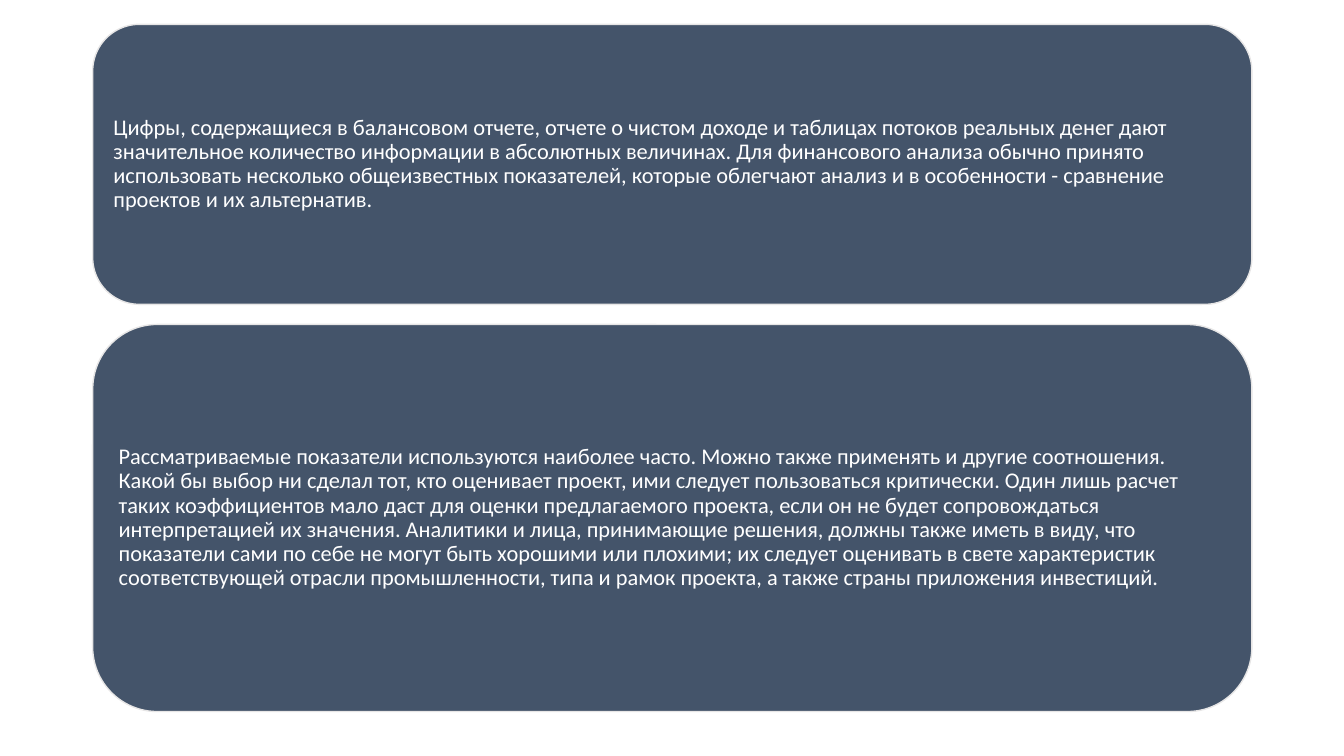
from pptx import Presentation
from pptx.dml.color import RGBColor
from pptx.enum.shapes import MSO_SHAPE as Preset
from pptx.enum.text import MSO_ANCHOR as Anchor, PP_ALIGN as Align
from pptx.util import Pt

COLORS = {"panel": "44546A", "outline": "E7E6E6", "text": "FFFFFF"}
PANEL_LEFT, PANEL_WIDTH = 66.24, 828
FIRST_TOP, PANEL_GAP = 17.4, 14.4
TEXT_INSET = 5.04

STATEMENTS = [
    (200, "Цифры, содержащиеся в балансовом отчете, отчете о чистом доходе и "
          "таблицах потоков реальных денег дают значительное количество информации "
          "в абсолютных величинах. Для финансового анализа обычно принято "
          "использовать несколько общеизвестных показателей, которые облегчают "
          "анализ и в особенности - сравнение проектов и их альтернатив."),
    (276.5, "Рассматриваемые показатели используются наиболее часто. Можно также "
            "применять и другие соотношения. Какой бы выбор ни сделал тот, кто "
            "оценивает проект, ими следует пользоваться критически. Один лишь расчет "
            "таких коэффициентов мало даст для оценки предлагаемого проекта, если он "
            "не будет сопровождаться интерпретацией их значения. Аналитики и лица, "
            "принимающие решения, должны также иметь в виду, что показатели сами по "
            "себе не могут быть хорошими или плохими; их следует оценивать в свете "
            "характеристик соответствующей отрасли промышленности, типа и рамок "
            "проекта, а также страны приложения инвестиций."),
]


def color(role):
    return RGBColor.from_string(COLORS[role])


def add_panel(slide, top, height, statement):
    panel = slide.shapes.add_shape(
        Preset.ROUNDED_RECTANGLE, Pt(PANEL_LEFT), Pt(top), Pt(PANEL_WIDTH), Pt(height))
    panel.shadow.inherit = False
    panel.fill.solid()
    panel.fill.fore_color.rgb = color("panel")
    panel.line.color.rgb = color("outline")
    panel.line.width = Pt(1)
    write_statement(panel.text_frame, statement)


def write_statement(frame, statement):
    frame.word_wrap = True
    frame.vertical_anchor = Anchor.MIDDLE
    frame.margin_left = frame.margin_right = Pt(TEXT_INSET)
    frame.margin_top = frame.margin_bottom = Pt(TEXT_INSET)
    frame.text = statement
    paragraph = frame.paragraphs[0]
    paragraph.alignment = Align.LEFT
    paragraph.line_spacing = 0.9
    font = paragraph.runs[0].font
    font.name = "Calibri"
    font.size = Pt(16)
    font.color.rgb = color("text")


def main():
    deck = Presentation()
    deck.slide_width, deck.slide_height = Pt(960), Pt(540)
    slide = deck.slides.add_slide(deck.slide_layouts[6])
    top = FIRST_TOP
    for height, statement in STATEMENTS:
        add_panel(slide, top, height, statement)
        top += height + PANEL_GAP
    deck.save("out.pptx")


if __name__ == "__main__":
    main()
